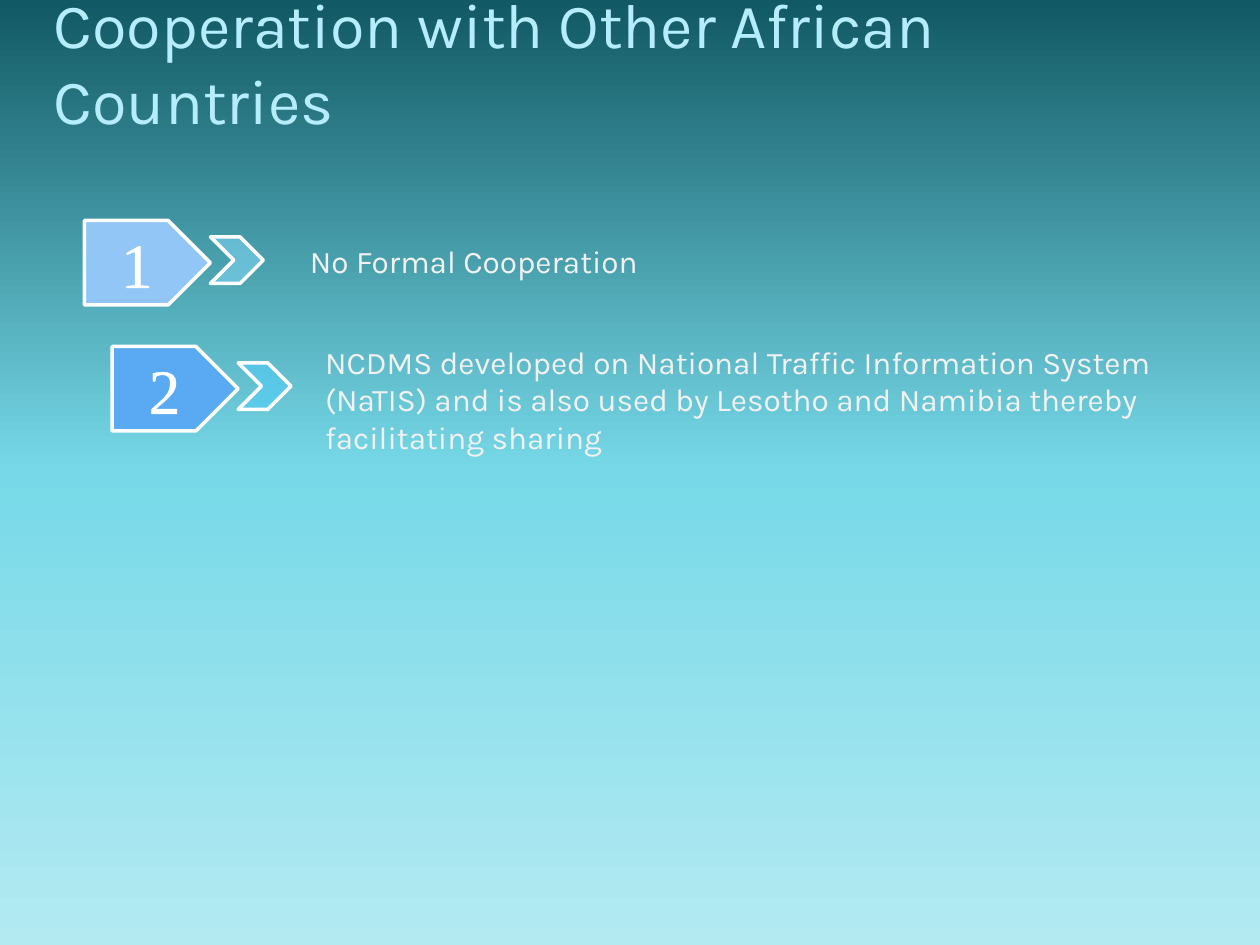
from copy import deepcopy
from dataclasses import dataclass

from lxml import etree
from pptx import Presentation
from pptx.dml.color import RGBColor
from pptx.enum.shapes import MSO_SHAPE
from pptx.enum.text import MSO_ANCHOR, PP_ALIGN
from pptx.oxml.ns import qn
from pptx.util import Emu, Pt

PX = 9144  # 100 px to the inch
PLATE, CHEVRON = MSO_SHAPE.PENTAGON, MSO_SHAPE.CHEVRON
TOP, MIDDLE = MSO_ANCHOR.TOP, MSO_ANCHOR.MIDDLE
LEFT, CENTER = PP_ALIGN.LEFT, PP_ALIGN.CENTER
SANS, SERIF = "Karla", "Times New Roman"
COLORS = {
    "deep": "115964", "mid": "77D9E8", "pale": "B3EAF2",
    "title": "B5EDFD", "edge": "083763", "body": "F2F2F2",
    "white": "FFFFFF", "plate1": "91C6F7", "arrow1": "8ADFFF",
    "plate2": "59AAF2", "arrow2": "4FCEFF",
}


@dataclass
class Box:
    x: int
    y: int
    w: int
    h: int

    def emu(self) -> list[Emu]:
        return [Emu(n * PX) for n in (self.x, self.y, self.w, self.h)]


@dataclass
class Style:
    font: str
    size: int
    color: str
    align: PP_ALIGN = LEFT
    anchor: MSO_ANCHOR = TOP
    edge: str = ""
    width: float = 0


@dataclass
class Item:
    num: str
    x: int
    y: int
    plate: str
    arrow: str
    text: str
    box: Box


TITLE = Style(SANS, 36, "title", anchor=MIDDLE, edge="edge", width=0.75)
BODY = Style(SANS, 18, "body")
DIGIT = Style(SERIF, 36, "white", CENTER, MIDDLE, "white", 1.45)
ITEMS = [
    Item("1", 67, 175, "plate1", "arrow1", "No Formal Cooperation",
         Box(230, 187, 600, 53)),
    Item("2", 89, 275, "plate2", "arrow2",
         "NCDMS developed on National Traffic Information System (NaTIS) "
         "and is also used by Lesotho and Namibia thereby facilitating sharing",
         Box(242, 267, 683, 175)),
]


def rgb(name: str) -> RGBColor:
    return RGBColor.from_string(COLORS[name])


def outline(run, color: str, width: float) -> None:
    """Draw an outline round the letters of a run."""
    line = etree.Element(qn("a:ln"), w=str(Pt(width)))
    fill = etree.SubElement(line, qn("a:solidFill"))
    etree.SubElement(fill, qn("a:srgbClr"), val=COLORS[color])
    run.font._element.insert(0, line)


def write(shape, text: str, style: Style) -> None:
    frame = shape.text_frame
    frame.text = text
    frame.word_wrap = True
    frame.vertical_anchor = style.anchor
    para = frame.paragraphs[0]
    para.alignment = style.align
    run = para.runs[0]
    run.font.name = style.font
    run.font.size = Pt(style.size)
    run.font.color.rgb = rgb(style.color)
    if style.edge:
        outline(run, style.edge, style.width)


def label(slide, box: Box, text: str, style: Style, inset: int, end: int) -> None:
    shape = slide.shapes.add_textbox(*box.emu())
    write(shape, text, style)
    shape.text_frame.margin_left = Emu(inset * PX)
    shape.text_frame.margin_right = Emu(end * PX)


def block(group, kind: MSO_SHAPE, box: Box, color: str):
    shape = group.shapes.add_shape(kind, *box.emu())
    shape.shadow.inherit = False
    shape.fill.solid()
    shape.fill.fore_color.rgb = rgb(color)
    shape.line.color.rgb = rgb("white")
    shape.line.width = Pt(2)
    return shape


def badge(slide, item: Item) -> None:
    """Draw a numbered plate followed by a see-through chevron."""
    group = slide.shapes.add_group_shape()
    plate = block(group, PLATE, Box(item.x, item.y, 100, 67), item.plate)
    write(plate, item.num, DIGIT)
    arrow = block(group, CHEVRON, Box(item.x + 100, item.y + 13, 42, 37), item.arrow)
    tone = arrow._element.spPr.find(qn("a:solidFill")).find(qn("a:srgbClr"))
    etree.SubElement(tone, qn("a:alpha"), val="48000")


def backdrop(slide) -> None:
    fill = slide.background.fill
    fill.gradient()
    fill.gradient_angle = 270
    first = fill.gradient_stops[0]._gs
    first.addnext(deepcopy(first))
    names = ("deep", "mid", "pale")
    for stop, name, pos in zip(fill.gradient_stops, names, (0, 0.5, 1)):
        stop.color.rgb = rgb(name)
        stop.position = pos


def main() -> None:
    deck = Presentation()
    deck.slide_width, deck.slide_height = Emu(1000 * PX), Emu(750 * PX)
    slide = deck.slides.add_slide(deck.slide_layouts[6])
    backdrop(slide)
    label(slide, Box(33, -3, 950, 103),
          "Cooperation with Other African Countries", TITLE, 10, 20)
    for item in ITEMS:
        label(slide, item.box, item.text, BODY, 16, 10)
        badge(slide, item)
    deck.save("out.pptx")


if __name__ == "__main__":
    main()
